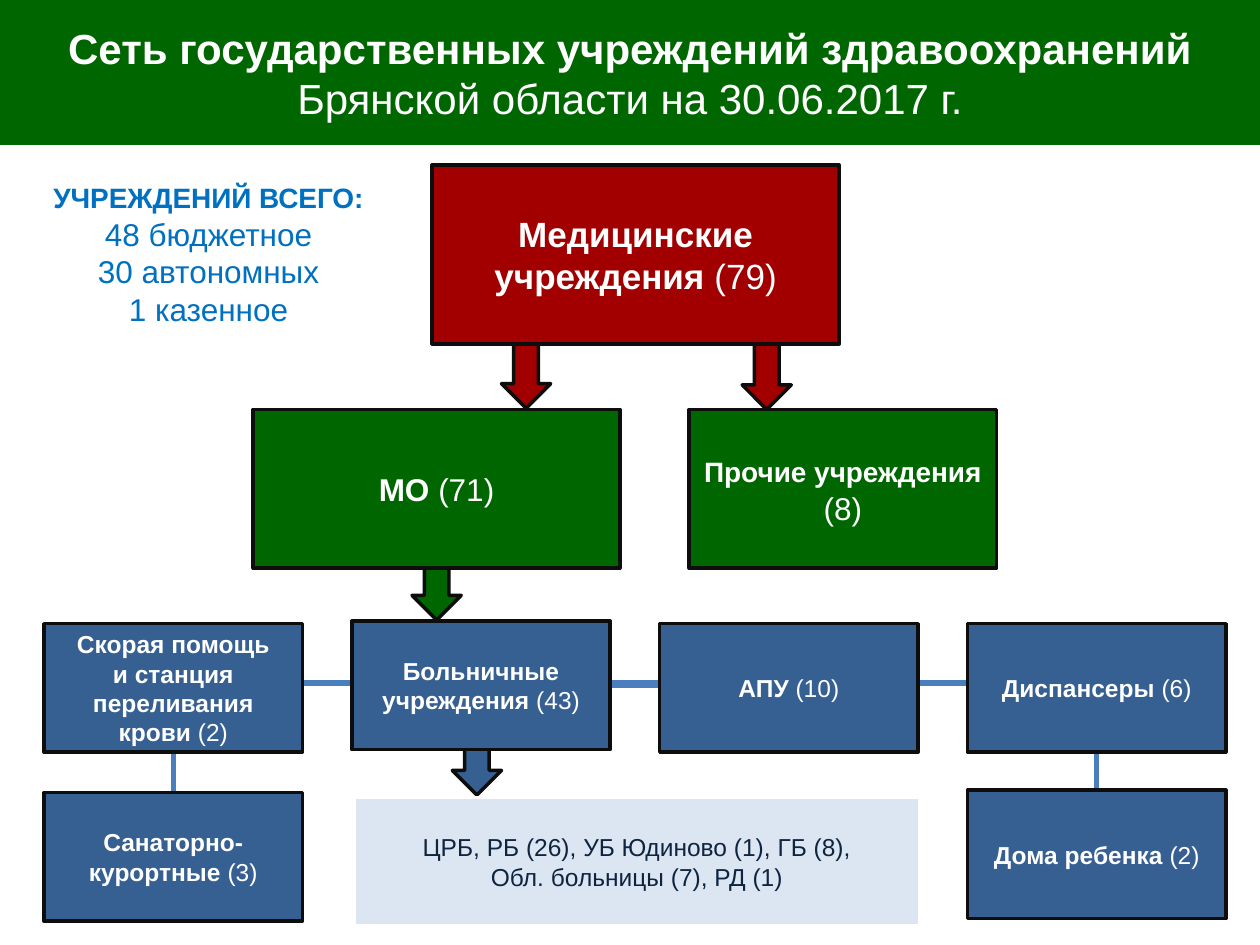
from lxml import etree
from pptx import Presentation
from pptx.dml.color import RGBColor
from pptx.enum.shapes import MSO_CONNECTOR, MSO_SHAPE
from pptx.enum.text import MSO_ANCHOR, MSO_AUTO_SIZE, PP_ALIGN
from pptx.oxml.ns import qn
from pptx.util import Inches, Pt

BOX = MSO_SHAPE.RECTANGLE
ARROW = MSO_SHAPE.DOWN_ARROW
STRAIGHT = MSO_CONNECTOR.STRAIGHT
CENTER = PP_ALIGN.CENTER
MIDDLE = MSO_ANCHOR.MIDDLE
NO_AUTOFIT = MSO_AUTO_SIZE.NONE

WHITE = RGBColor(0xFF, 0xFF, 0xFF)
BLACK = RGBColor(0x0D, 0x0D, 0x0D)
GREEN = RGBColor(0x00, 0x66, 0x00)
RED = RGBColor(0xA2, 0x00, 0x00)
BLUE = RGBColor(0x37, 0x60, 0x92)
LINK_BLUE = RGBColor(0x4B, 0x7E, 0xBC)
PALE_BLUE = RGBColor(0xDC, 0xE6, 0xF2)
NAVY = RGBColor(0x0F, 0x24, 0x3E)
BRIGHT_BLUE = RGBColor(0x00, 0x70, 0xC0)

FONT = "Arial"
SLIDE_W, SLIDE_H = 10, 7.5
UNIT_W, UNIT_H = 2.05, 1.02
COLUMNS = [0.35 + 2.443 * column for column in range(4)]
UPPER_ROW, LOWER_ROW = 4.95, 6.29
TOP_ROW, TOP_H = 1.31, 1.42
GROUP_ROW, GROUP_H = 3.25, 1.26
ARROW_W, ARROW_H = 0.39, 0.55


def write_text(frame, paragraphs, color):
    frame.word_wrap = True
    frame.auto_size = NO_AUTOFIT
    frame.vertical_anchor = MIDDLE
    for index, runs in enumerate(paragraphs):
        paragraph = frame.add_paragraph() if index else frame.paragraphs[0]
        paragraph.alignment = CENTER
        paragraph.font.name = FONT
        paragraph.font.color.rgb = color
        paragraph.font.size = Pt(runs[0][1])
        for text, size, bold in runs:
            for part, line in enumerate(text.split("\n")):
                if part:
                    paragraph.add_line_break()
                if line:
                    run = paragraph.add_run()
                    run.text = line
                    run.font.size = Pt(size)
                    run.font.bold = bold


def add_figure(slide, preset, left, top, width, height, fill, outline=BLACK):
    figure = slide.shapes.add_shape(
        preset, Inches(left), Inches(top), Inches(width), Inches(height))
    figure.shadow.inherit = False
    figure.fill.solid()
    figure.fill.fore_color.rgb = fill
    figure.line.color.rgb = outline
    figure.line.width = Pt(2)
    return figure


def add_unit(slide, left, top, width, height, fill, name, count, size, name_size=None):
    unit = add_figure(slide, BOX, left, top, width, height, fill)
    runs = [(name, name_size or size, True), (f" ({count})", size, False)]
    write_text(unit.text_frame, [runs], WHITE)


def add_arrow(slide, left, top, fill):
    add_figure(slide, ARROW, left, top, ARROW_W, ARROW_H, fill)


def add_link(slide, x1, y1, x2, y2):
    link = slide.shapes.add_connector(
        STRAIGHT, Inches(x1), Inches(y1), Inches(x2), Inches(y2))
    link.line.color.rgb = LINK_BLUE
    link.line.width = Pt(3)
    properties = link._element.find(qn("p:spPr"))
    etree.SubElement(properties, qn("a:effectLst"))


def add_title(slide):
    title = slide.shapes.title
    title.left, title.top = 0, 0
    title.width, title.height = Inches(SLIDE_W), Inches(1.15)
    title.fill.solid()
    title.fill.fore_color.rgb = GREEN
    write_text(title.text_frame, [[
        ("Сеть государственных учреждений здравоохранений\n", 24, True),
        ("Брянской области на 30.06.2017 г.", 24, False),
    ]], WHITE)


def add_totals(slide):
    totals = slide.shapes.add_textbox(
        Inches(0.2), Inches(TOP_ROW), Inches(2.91), Inches(TOP_H))
    lines = ["48 бюджетное", "30 автономных", "1 казенное"]
    write_text(totals.text_frame,
               [[("УЧРЕЖДЕНИЙ ВСЕГО:", 16, True)]]
               + [[(line, 18, False)] for line in lines], BRIGHT_BLUE)


def add_hospital_list(slide):
    hospitals = add_figure(slide, BOX, 2.81, 6.33, 4.49, UNIT_H, PALE_BLUE, WHITE)
    write_text(hospitals.text_frame, [[
        ("ЦРБ, РБ (26), УБ Юдиново (1), ГБ (8),\nОбл. больницы (7), РД (1)", 14, False),
    ]], NAVY)


def main():
    presentation = Presentation()
    presentation.slide_width = Inches(SLIDE_W)
    presentation.slide_height = Inches(SLIDE_H)
    slide = presentation.slides.add_slide(presentation.slide_layouts[5])
    add_title(slide)

    for left, top, fill in [
        (3.59, 5.76, BLUE), (5.89, 2.7, RED), (3.27, 4.37, GREEN), (3.98, 2.69, RED),
    ]:
        add_arrow(slide, left, top, fill)

    for x1, y1, x2, y2 in [
        (8.7, 5.6, 8.7, 6.66), (1.38, 5.57, 1.38, 6.62),
        (3.11, 5.44, 6.89, 5.44), (0.59, 5.42, 8.39, 5.42),
    ]:
        add_link(slide, x1, y1, x2, y2)

    add_unit(slide, 3.43, TOP_ROW, 3.23, TOP_H, RED, "Медицинские учреждения", 79, 20)
    add_unit(slide, 2.01, GROUP_ROW, 2.91, GROUP_H, GREEN, "МО", 71, 18)
    add_unit(slide, 5.47, GROUP_ROW, 2.44, GROUP_H, GREEN,
             "Прочие учреждения", 8, 18, name_size=16)

    for column, top, name, count in [
        (0, UPPER_ROW, "Скорая помощь\nи станция переливания крови", 2),
        (1, UPPER_ROW - 0.02, "Больничные учреждения", 43),
        (2, UPPER_ROW, "АПУ", 10),
        (3, UPPER_ROW, "Диспансеры", 6),
        (0, LOWER_ROW, "Санаторно-курортные", 3),
        (3, LOWER_ROW - 0.02, "Дома ребенка", 2),
    ]:
        add_unit(slide, COLUMNS[column], top, UNIT_W, UNIT_H, BLUE, name, count, 14)

    add_hospital_list(slide)
    add_totals(slide)
    presentation.save("out.pptx")


if __name__ == "__main__":
    main()
